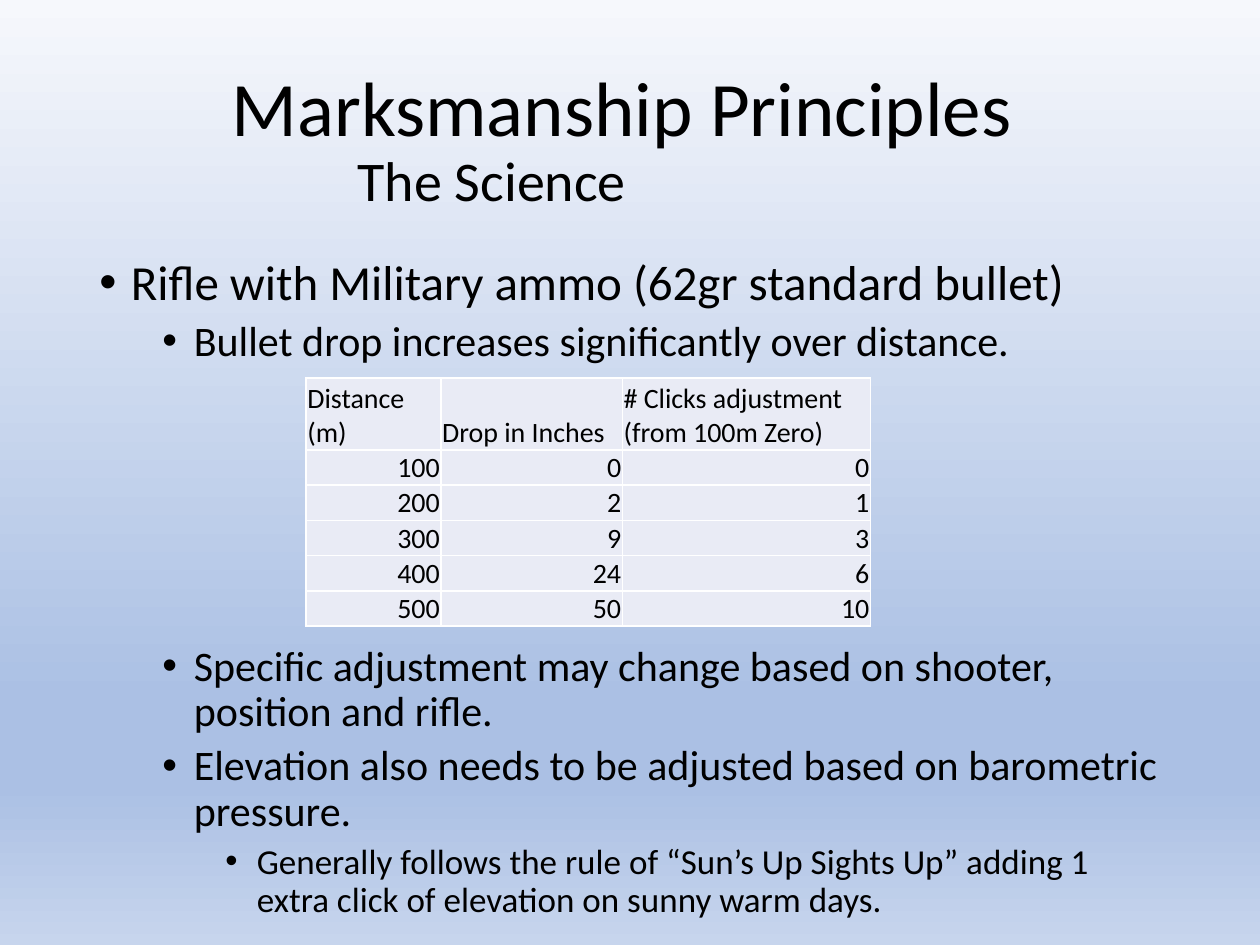
from dataclasses import dataclass
from typing import NamedTuple

from lxml import etree
from pptx import Presentation, util as u
from pptx.dml.color import RGBColor
from pptx.enum import text
from pptx.oxml import ns


@dataclass(frozen=True)
class Theme:
    font: str = "Calibri"
    ink: str = "000000"
    cell: str = "E9EBF5"
    border: str = "FFFFFF"
    title: int = 44
    subtitle: int = 32
    levels: tuple = (28, 24, 20)
    table: int = 16
    background: tuple = ((0, "F6F8FC"), (74, "ABC0E4"), (83, "ABC0E4"), (100, "C7D5ED"))


class Box(NamedTuple):
    left: float
    top: float
    width: float
    height: float

    def lengths(self) -> list:
        return [u.Inches(value) for value in self]


class Line(NamedTuple):
    words: str
    size: int
    indent: float = 0
    bullet: bool = False
    before: float = 0


THEME = Theme()
HANGING = 0.25
TABLE_GAP = 160  # points left free for the table

TITLE = [
    Line("Marksmanship Principles", THEME.title),
    Line("The Science", THEME.subtitle, indent=1),
]


def bullet(words: str, level: int, before: float = 5) -> Line:
    return Line(words, THEME.levels[level], HANGING + level / 2, True, before)


BODY = [
    bullet("Rifle with Military ammo (62gr standard bullet)", 0, before=0),
    bullet("Bullet drop increases significantly over distance.", 1),
    bullet("Specific adjustment may change based on shooter, position and rifle.", 1, TABLE_GAP),
    bullet("Elevation also needs to be adjusted based on barometric pressure.", 1),
    bullet("Generally follows the rule of “Sun’s Up Sights Up” adding 1 extra click of "
           "elevation on sunny warm days.", 2),
]

DROP_TABLE = [
    ("Distance (m)", "Drop in Inches", "# Clicks adjustment (from 100m Zero)"),
    (100, 0, 0),
    (200, 2, 1),
    (300, 9, 3),
    (400, 24, 6),
    (500, 50, 10),
]
COLUMN_WIDTHS = (1.07, 1.44, 1.97)
HEADER_HEIGHT, ROW_HEIGHT = 0.57, 0.28


def set_font(paragraph, size: int) -> None:
    paragraph.font.name = THEME.font
    paragraph.font.size = u.Pt(size)
    paragraph.font.color.rgb = RGBColor.from_string(THEME.ink)


def paint_background(slide) -> None:
    fill = slide.background.fill
    fill.gradient()
    fill.gradient_angle = 270
    stops = next(slide.element.iter(ns.qn("a:gsLst")))
    for stop in list(stops):
        stops.remove(stop)
    for position, color in THEME.background:
        stop = etree.SubElement(stops, ns.qn("a:gs"), pos=str(position * 1000))
        etree.SubElement(stop, ns.qn("a:srgbClr"), val=color)


def add_text(slide, box: Box, lines: list[Line], anchor) -> None:
    frame = slide.shapes.add_textbox(*box.lengths()).text_frame
    frame.word_wrap = True
    frame.vertical_anchor = anchor
    for index, line in enumerate(lines):
        paragraph = frame.add_paragraph() if index else frame.paragraphs[0]
        paragraph.text = line.words
        paragraph.line_spacing = 0.9
        paragraph.space_before = u.Pt(line.before)
        properties = paragraph._p.get_or_add_pPr()
        properties.set("marL", str(u.Inches(line.indent)))
        if line.bullet:
            properties.set("indent", str(u.Inches(-HANGING)))
            etree.SubElement(properties, ns.qn("a:buFont"), typeface="Arial")
            etree.SubElement(properties, ns.qn("a:buChar"), char="•")
        set_font(paragraph, line.size)


def add_borders(cell) -> None:
    properties = cell._tc.get_or_add_tcPr()
    for side in ("lnL", "lnR", "lnT", "lnB"):
        line = etree.SubElement(properties, ns.qn(f"a:{side}"), w=str(u.Pt(1)))
        fill = etree.SubElement(line, ns.qn("a:solidFill"))
        etree.SubElement(fill, ns.qn("a:srgbClr"), val=THEME.border)


def fill_cell(cell, value: str | int) -> None:
    cell.margin_left = cell.margin_right = cell.margin_top = u.Inches(0.01)
    cell.margin_bottom = 0
    cell.vertical_anchor = text.MSO_ANCHOR.BOTTOM
    add_borders(cell)
    cell.fill.solid()
    cell.fill.fore_color.rgb = RGBColor.from_string(THEME.cell)
    cell.text = str(value)
    paragraph = cell.text_frame.paragraphs[0]
    if isinstance(value, int):
        paragraph.alignment = text.PP_ALIGN.RIGHT
    set_font(paragraph, THEME.table)


def add_drop_table(slide, left: float, top: float) -> None:
    height = HEADER_HEIGHT + ROW_HEIGHT * (len(DROP_TABLE) - 1)
    box = Box(left, top, sum(COLUMN_WIDTHS), height)
    table = slide.shapes.add_table(len(DROP_TABLE), len(COLUMN_WIDTHS), *box.lengths()).table
    table.first_row = table.horz_banding = False
    for column, width in zip(table.columns, COLUMN_WIDTHS):
        column.width = u.Inches(width)
    for index, (row, values) in enumerate(zip(table.rows, DROP_TABLE)):
        row.height = u.Inches(ROW_HEIGHT if index else HEADER_HEIGHT)
        for cell, value in zip(row.cells, values):
            fill_cell(cell, value)


def main() -> None:
    presentation = Presentation()
    presentation.slide_width, presentation.slide_height = u.Inches(10), u.Inches(7.5)
    slide = presentation.slides.add_slide(presentation.slide_layouts[6])
    paint_background(slide)
    # Heading, bullets and the table in the gap between them
    add_text(slide, Box(1.74, 0.4, 7.57, 1.45), TITLE, text.MSO_ANCHOR.MIDDLE)
    add_text(slide, Box(0.69, 2, 8.62, 5.5), BODY, text.MSO_ANCHOR.TOP)
    add_drop_table(slide, 2.43, 3)
    presentation.save("out.pptx")


if __name__ == "__main__":
    main()
